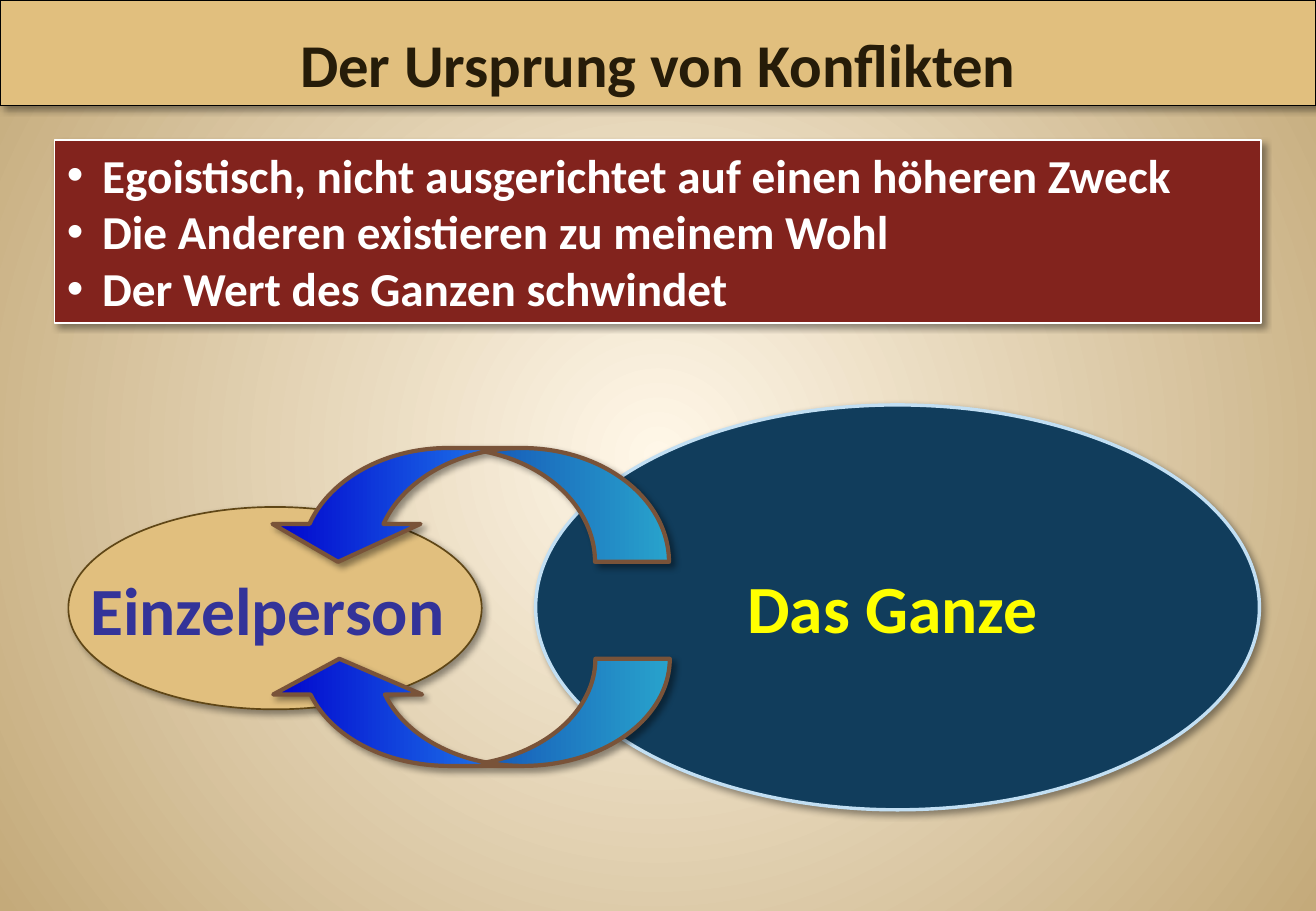
from lxml import etree
from pptx import Presentation
from pptx.dml.color import RGBColor
from pptx.enum.shapes import MSO_SHAPE
from pptx.enum.text import MSO_ANCHOR, PP_ALIGN
from pptx.oxml.ns import qn
from pptx.util import Pt

RECTANGLE, OVAL = MSO_SHAPE.RECTANGLE, MSO_SHAPE.OVAL
CURVED_ARROW = MSO_SHAPE.CURVED_DOWN_ARROW
TOP, MIDDLE, BOTTOM = MSO_ANCHOR.TOP, MSO_ANCHOR.MIDDLE, MSO_ANCHOR.BOTTOM
LEFT, CENTER = PP_ALIGN.LEFT, PP_ALIGN.CENTER
PAGE_WIDTH, PAGE_HEIGHT = 780, 540
SAND = "E1BF7E"


def color(value):
    """Turn a hex string into a colour."""
    return RGBColor.from_string(value)


def add_element(parent, tag, **attributes):
    """Append a drawing element with its attributes."""
    element = etree.SubElement(parent, qn(tag))
    for name, value in attributes.items():
        element.set(name, str(value))
    return element


def set_gradient(fill, first, last):
    """Fill with a two-colour gradient."""
    fill.gradient()
    for stop, value, position in zip(fill.gradient_stops, (first, last), (0, 1)):
        stop.color.rgb = color(value)
        stop.position = position


def set_background(page):
    """Give the page a circular gradient that is light in the centre."""
    set_gradient(page.background.fill, "FFF7E8", "C4AA7A")
    gradient = next(page.element.iter(qn("a:gradFill")))
    gradient.remove(gradient.find(qn("a:lin")))
    circle = add_element(gradient, "a:path", path="circle")
    add_element(circle, "a:fillToRect", l=50000, t=50000, r=50000, b=50000)


def add_shadow(shape):
    """Give a shape a soft shadow to the lower right."""
    shape.shadow.inherit = False
    effects = shape.element.spPr.find(qn("a:effectLst"))
    shadow = add_element(effects, "a:outerShdw", blurRad=Pt(4), dist=Pt(3),
                         dir=45 * 60000, algn="tl", rotWithShape=0)
    black = add_element(shadow, "a:srgbClr", val="000000")
    add_element(black, "a:alpha", val=40000)


def add_panel(page, kind, box, line, width, fill=None):
    """Draw an outlined shape with a shadow."""
    shape = page.shapes.add_shape(kind, *map(Pt, box))
    if fill:
        shape.fill.solid()
        shape.fill.fore_color.rgb = color(fill)
    shape.line.color.rgb = color(line)
    shape.line.width = Pt(width)
    add_shadow(shape)
    return shape


def write(shape, text, size, ink, align=CENTER, anchor=MIDDLE, wrap=True, bullet=None):
    """Write bold text into a shape, one paragraph per line."""
    frame = shape.text_frame
    frame.word_wrap = wrap
    frame.vertical_anchor = anchor
    for index, line in enumerate(text.split("\n")):
        para = frame.add_paragraph() if index else frame.paragraphs[0]
        para.alignment = align
        if bullet:
            properties = para._p.get_or_add_pPr()
            properties.set("marL", str(Pt(21)))
            properties.set("indent", str(-Pt(21)))
            add_element(properties, "a:buFont", typeface="Arial")
            add_element(properties, "a:buChar", char=bullet)
        span = para.add_run()
        span.text = line
        span.font.name = "Calibri"
        span.font.size = Pt(size)
        span.font.bold = True
        span.font.color.rgb = color(ink)


def add_title(page, box, text):
    """Draw the title band."""
    band = add_panel(page, RECTANGLE, box, "000000", 0.75, SAND)
    write(band, text, 36, "261C09", anchor=BOTTOM)


def add_causes(page, box, text):
    """Draw the red panel with the bulleted causes."""
    panel = add_panel(page, RECTANGLE, box, "FFFFFF", 0.75, "82231D")
    write(panel, text, 28, "FFFFFF", align=LEFT, anchor=TOP, bullet="•")


def add_arrow(page, box, bend, flipped=False):
    """Draw a curved arrow from the whole to the individual."""
    arrow = add_panel(page, CURVED_ARROW, box, "795339", 2.5)
    set_gradient(arrow.fill, "0000CC", "33CCFF")
    arrow.fill.gradient_angle = 0
    arrow.element.spPr.find(qn("a:gradFill")).set("rotWithShape", "0")
    for index, value in enumerate((bend, 2 * bend, 0.333)):
        arrow.adjustments[index] = value
    arrow.rotation = 180
    if flipped:
        arrow.element.spPr.find(qn("a:xfrm")).set("flipV", "1")


def add_relation(page, box):
    """Draw the whole, the individual and the arrows between them."""
    left, top, width, height = box
    whole = (left + width - 429, top, 429, height)
    add_panel(page, OVAL, whole, "C2DFF3", 2, "113D5C")
    person = add_panel(page, OVAL, (left, top + 60.5, 245, height / 2), "5F4616", 1, SAND)
    write(person, "Einzelperson ", 40, "333399", wrap=False)
    label = page.shapes.add_textbox(*map(Pt, (whole[0] + 12, top + 92, 408, 55.5)))
    write(label, "Das Ganze ", 40, "FFFF00", anchor=TOP)
    add_arrow(page, (left + 116.5, top + 150.5, 240, 63.5), 0.695)
    add_arrow(page, (left + 116, top + 25.5, 240, 67.5), 0.65, flipped=True)


def main():
    """Build the slide and save it."""
    deck = Presentation()
    deck.slide_width, deck.slide_height = Pt(PAGE_WIDTH), Pt(PAGE_HEIGHT)
    page = deck.slides.add_slide(deck.slide_layouts[6])
    set_background(page)
    add_relation(page, (40.5, 240, 706, 240))
    add_causes(page, (32.5, 83, 715, 108.5),
               "Egoistisch, nicht ausgerichtet auf einen höheren Zweck\n"
               "Die Anderen existieren zu meinem Wohl\n"
               "Der Wert des Ganzen schwindet")
    add_title(page, (0, 0, PAGE_WIDTH, 62.5), "Der Ursprung von Konflikten")
    deck.save("out.pptx")


if __name__ == "__main__":
    main()
